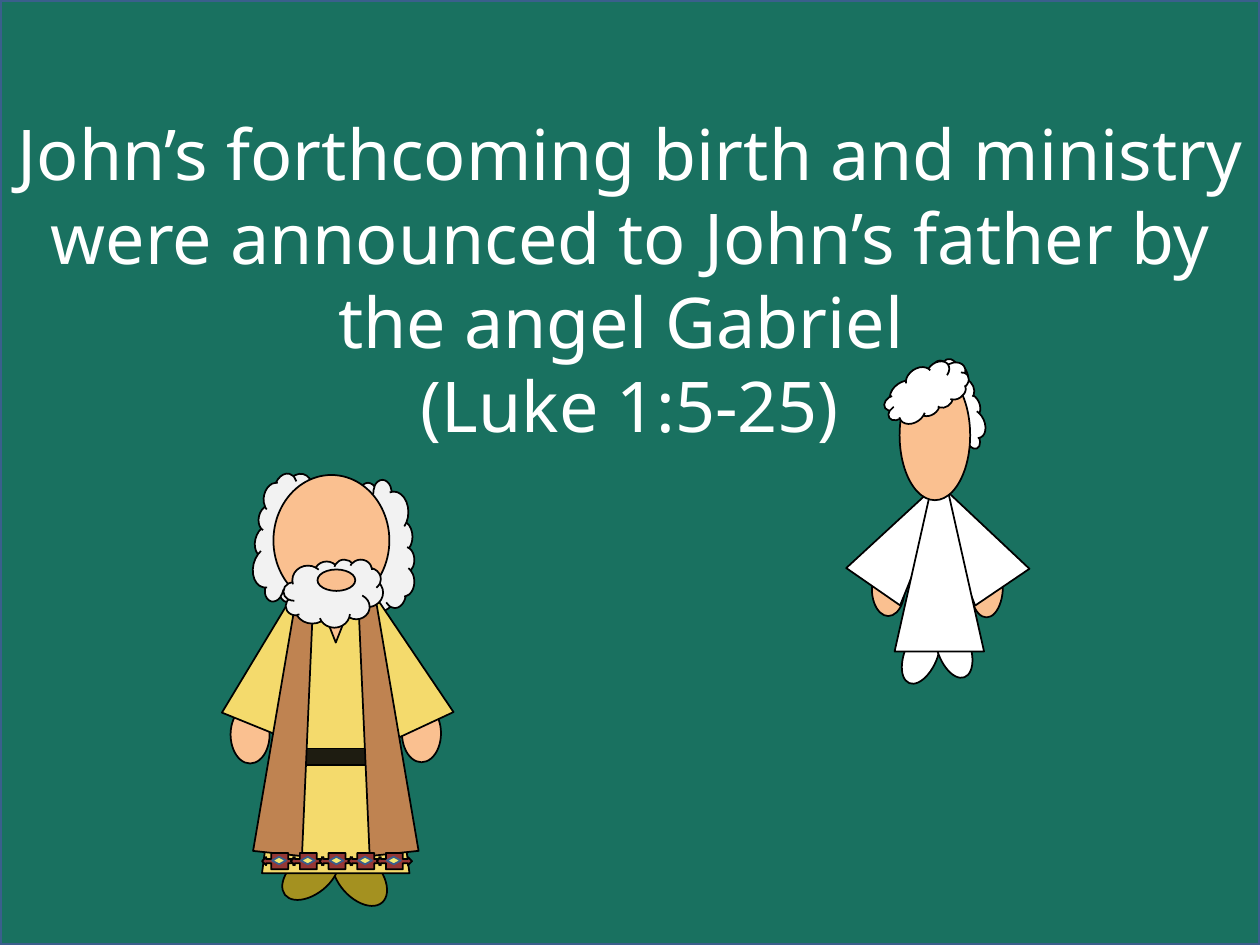
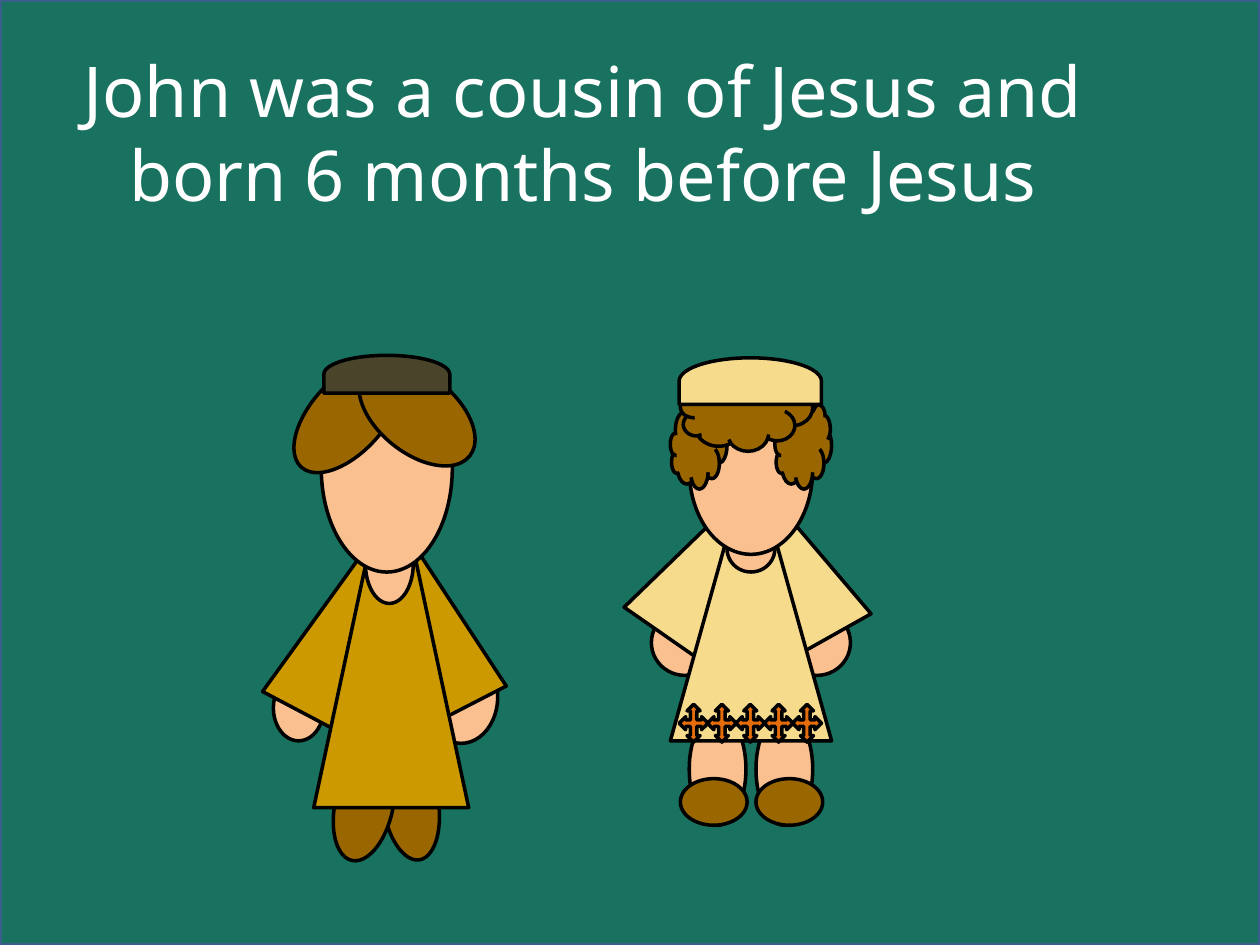
"""Build two illustrated story slides about the birth of John."""
from dataclasses import dataclass

from pptx import Presentation
from pptx.dml.color import RGBColor
from pptx.enum.shapes import MSO_SHAPE
from pptx.enum.text import MSO_AUTO_SIZE, PP_ALIGN
from pptx.util import Inches, Pt

RECTANGLE = MSO_SHAPE.RECTANGLE
OVAL = MSO_SHAPE.OVAL
CLOUD = MSO_SHAPE.CLOUD
TRAPEZOID = MSO_SHAPE.TRAPEZOID
TRIANGLE = MSO_SHAPE.ISOSCELES_TRIANGLE
DIAMOND = MSO_SHAPE.DIAMOND
CAP = MSO_SHAPE.FLOWCHART_DELAY
CALLOUT = MSO_SHAPE.LEFT_RIGHT_ARROW_CALLOUT
QUAD_ARROW = MSO_SHAPE.QUAD_ARROW
CENTER = PP_ALIGN.CENTER
GROW = MSO_AUTO_SIZE.SHAPE_TO_FIT_TEXT

WIDTH, HEIGHT = 10, 7.5
BLANK_LAYOUT = 6
COLORS = {
    "backdrop": "197160", "frame": "3A5F8C", "white": "FFFFFF", "outline": "000000",
    "skin": "FAC090", "gray hair": "F2F2F2", "olive": "A49120", "yellow": "F4DA6C",
    "belt": "1E1C11", "cloak": "BF8351", "maroon": "953735", "lemon": "F4EB74",
    "brown": "996600", "gold": "CC9900", "dark cap": "4A452A", "cream": "F7DB8D",
    "orange": "E46C0A",
}
TITLE_FRAME = {"word_wrap": True, "auto_size": GROW}
TITLE_FONT = {"name": "Noto Sans", "size": Pt(40)}


@dataclass(frozen=True)
class Piece:
    """One preset shape, with lengths in inches."""
    kind: MSO_SHAPE
    color: str
    left: float
    top: float
    width: float
    height: float
    turn: float = 0
    slant: float | None = None
    flipped: bool = False
    outline: str = "outline"


@dataclass(frozen=True)
class Figure:
    """A person drawn from pieces, back to front."""
    stroke: float
    pieces: list[Piece]


@dataclass(frozen=True)
class Story:
    """The content of one slide."""
    lines: list[str]
    title_area: tuple[float, float, float, float]
    figures: list[Figure]


def spread(first: float, last: float, count: int = 5) -> list[float]:
    """Return evenly spaced positions from first to last."""
    return [first + (last - first) * step / (count - 1) for step in range(count)]


def elder_trim() -> list[Piece]:
    """Return the callouts and diamonds on the hem of the elder."""
    trim = []
    for left in spread(2.08, 2.99):
        trim.append(Piece(CALLOUT, "maroon", left, 6.77, 0.28, 0.13))
        trim.append(Piece(DIAMOND, "lemon", left + 0.08, 6.8, 0.11, 0.06, outline="frame"))
    return trim


ELDER = Figure(1, [
    Piece(OVAL, "olive", 2.69, 6.69, 0.33, 0.54, 318.5),
    Piece(OVAL, "olive", 2.31, 6.68, 0.31, 0.52, 51.4),
    Piece(CLOUD, "gray hair", 2.5, 4.06, 1.04, 0.54, 90),
    Piece(CLOUD, "gray hair", 1.77, 4, 1.04, 0.54, 283.6),
    Piece(OVAL, "skin", 3.19, 5.59, 0.31, 0.46),
    Piece(OVAL, "skin", 1.83, 5.6, 0.31, 0.46),
    Piece(TRAPEZOID, "yellow", 2.84, 4.66, 0.54, 1.16, 335, 0.34),
    Piece(TRAPEZOID, "yellow", 1.96, 4.64, 0.54, 1.16, 22.1, 0.34),
    Piece(TRAPEZOID, "yellow", 2.08, 4.68, 1.17, 2.25),
    Piece(TRIANGLE, "skin", 2.5, 4.68, 0.33, 0.42, 180),
    Piece(RECTANGLE, "belt", 2.25, 5.94, 0.83, 0.13),
    Piece(TRAPEZOID, "cloak", 2.12, 4.66, 0.39, 2.12, 6.1, 0.34),
    Piece(TRAPEZOID, "cloak", 2.82, 4.65, 0.39, 2.13, 353.9, 0.34),
    Piece(OVAL, "skin", 2.17, 3.77, 0.92, 1.04),
    Piece(CLOUD, "gray hair", 2.25, 4.44, 0.79, 0.54),
    Piece(OVAL, "skin", 2.52, 4.52, 0.3, 0.17),
    *elder_trim(),
])

ANGEL = Figure(1, [
    Piece(OVAL, "white", 7.18, 4.95, 0.26, 0.49, 22.6),
    Piece(OVAL, "white", 7.44, 4.9, 0.26, 0.49, 339.9),
    Piece(OVAL, "skin", 6.92, 4.46, 0.26, 0.43),
    Piece(OVAL, "skin", 7.7, 4.41, 0.26, 0.49),
    Piece(TRIANGLE, "white", 7, 3.6, 0.52, 1.16, 34.7),
    Piece(TRIANGLE, "white", 7.37, 3.6, 0.52, 1.16, 325.9),
    Piece(TRIANGLE, "white", 7.1, 3.59, 0.71, 1.58),
    Piece(CLOUD, "white", 7.21, 3.03, 0.76, 0.37, 66, flipped=True),
    Piece(OVAL, "skin", 7.14, 2.94, 0.56, 1.03),
    Piece(CLOUD, "white", 6.99, 2.91, 0.72, 0.39, 145.8, flipped=True),
])

OLDER_COUSIN = Figure(2, [
    Piece(OVAL, "brown", 3.04, 5.93, 0.44, 0.9, 351.2),
    Piece(OVAL, "brown", 2.66, 5.94, 0.46, 0.9, 12.4),
    Piece(OVAL, "skin", 3.37, 5.16, 0.58, 0.74),
    Piece(OVAL, "skin", 2.17, 5.36, 0.4, 0.52),
    Piece(TRAPEZOID, "gold", 3.09, 3.84, 0.54, 1.83, 332.8, 0.36),
    Piece(TRAPEZOID, "gold", 2.48, 3.89, 0.74, 1.88, 27.8, 0.36),
    Piece(TRAPEZOID, "gold", 2.49, 4.34, 1.23, 2.07, slant=0.36),
    Piece(OVAL, "skin", 2.9, 4.16, 0.38, 0.63),
    Piece(OVAL, "skin", 2.55, 2.89, 1.04, 1.65),
    Piece(OVAL, "brown", 2.47, 2.75, 0.58, 1.1, 42.2),
    Piece(OVAL, "brown", 3, 2.75, 0.62, 1.07, 308.7),
    Piece(CAP, "dark cap", 2.92, 2.47, 0.3, 1, 270),
])

YOUNGER_COUSIN = Figure(2, [
    *[Piece(OVAL, "skin", left, 5.66, 0.45, 0.89) for left in (5.47, 6)],
    *[Piece(OVAL, "skin", left, 4.84, 0.53, 0.52) for left in (6.22, 5.17)],
    Piece(TRAPEZOID, "cream", 6.04, 4.13, 0.68, 0.97, 330.7, 0.28),
    Piece(TRAPEZOID, "cream", 5.17, 4.13, 0.68, 0.97, 34.8, 0.28),
    Piece(TRAPEZOID, "cream", 5.32, 4.32, 1.28, 1.56, slant=0.34),
    *[Piece(OVAL, "brown", left, 6.18, 0.53, 0.37) for left in (5.4, 6)],
    *[Piece(QUAD_ARROW, "orange", left, 5.59, 0.23, 0.3) for left in spread(5.39, 6.29)],
    Piece(OVAL, "skin", 5.77, 4.17, 0.38, 0.37),
    Piece(OVAL, "skin", 5.47, 3.06, 0.98, 1.34),
    *[Piece(CLOUD, "brown", left, 3.21, 0.45, 0.67) for left in (6.15, 5.32)],
    Piece(CLOUD, "brown", 5.4, 2.91, 1.05, 0.67),
    Piece(CAP, "cream", 5.77, 2.46, 0.37, 1.13, 270),
])

BACKDROP = Piece(RECTANGLE, "backdrop", 0, 0, WIDTH, HEIGHT, outline="frame")

STORIES = [
    Story(["John’s forthcoming birth and ministry were announced to John’s father "
           "by the angel Gabriel ", "(Luke 1:5-25)"],
          (0, 0.83, 10, 3.47), [ELDER, ANGEL]),
    Story(["John was a cousin of Jesus and born 6 months before Jesus"],
          (0, 0.33, 9.25, 1.45), [OLDER_COUSIN, YOUNGER_COUSIN]),
]


def color(name: str) -> RGBColor:
    """Return a named colour."""
    return RGBColor.from_string(COLORS[name])


def apply_format(target: object, values: dict) -> None:
    """Set each attribute of the target from the values."""
    for name, value in values.items():
        setattr(target, name, value)


def draw_piece(shapes, piece: Piece, stroke: float) -> None:
    """Draw one piece into a shape collection."""
    lengths = [Inches(value) for value in (piece.left, piece.top, piece.width, piece.height)]
    shape = shapes.add_shape(piece.kind, *lengths)
    shape.shadow.inherit = False
    shape.rotation = piece.turn
    if piece.slant is not None:
        shape.adjustments[0] = piece.slant
    if piece.flipped:
        shape.element.spPr.xfrm.set("flipH", "1")
    shape.fill.solid()
    shape.fill.fore_color.rgb = color(piece.color)
    shape.line.color.rgb = color(piece.outline)
    shape.line.width = Pt(stroke)


def draw_title(page, story: Story) -> None:
    """Write the centred title of a story."""
    box = page.shapes.add_textbox(*[Inches(value) for value in story.title_area])
    apply_format(box.text_frame, TITLE_FRAME)
    for index, line in enumerate(story.lines):
        para = box.text_frame.add_paragraph() if index else box.text_frame.paragraphs[0]
        para.alignment = CENTER
        span = para.add_run()
        span.text = line
        apply_format(span.font, TITLE_FONT)
        span.font.color.rgb = color("white")


def draw_story(deck, story: Story) -> None:
    """Add a slide with its backdrop, title and figures."""
    page = deck.slides.add_slide(deck.slide_layouts[BLANK_LAYOUT])
    draw_piece(page.shapes, BACKDROP, 2)
    draw_title(page, story)
    for figure in story.figures:
        group = page.shapes.add_group_shape()
        for piece in figure.pieces:
            draw_piece(group.shapes, piece, figure.stroke)


def main() -> None:
    """Build and save the deck."""
    deck = Presentation()
    apply_format(deck, {"slide_width": Inches(WIDTH), "slide_height": Inches(HEIGHT)})
    for story in STORIES:
        draw_story(deck, story)
    deck.save("out.pptx")


if __name__ == "__main__":
    main()
